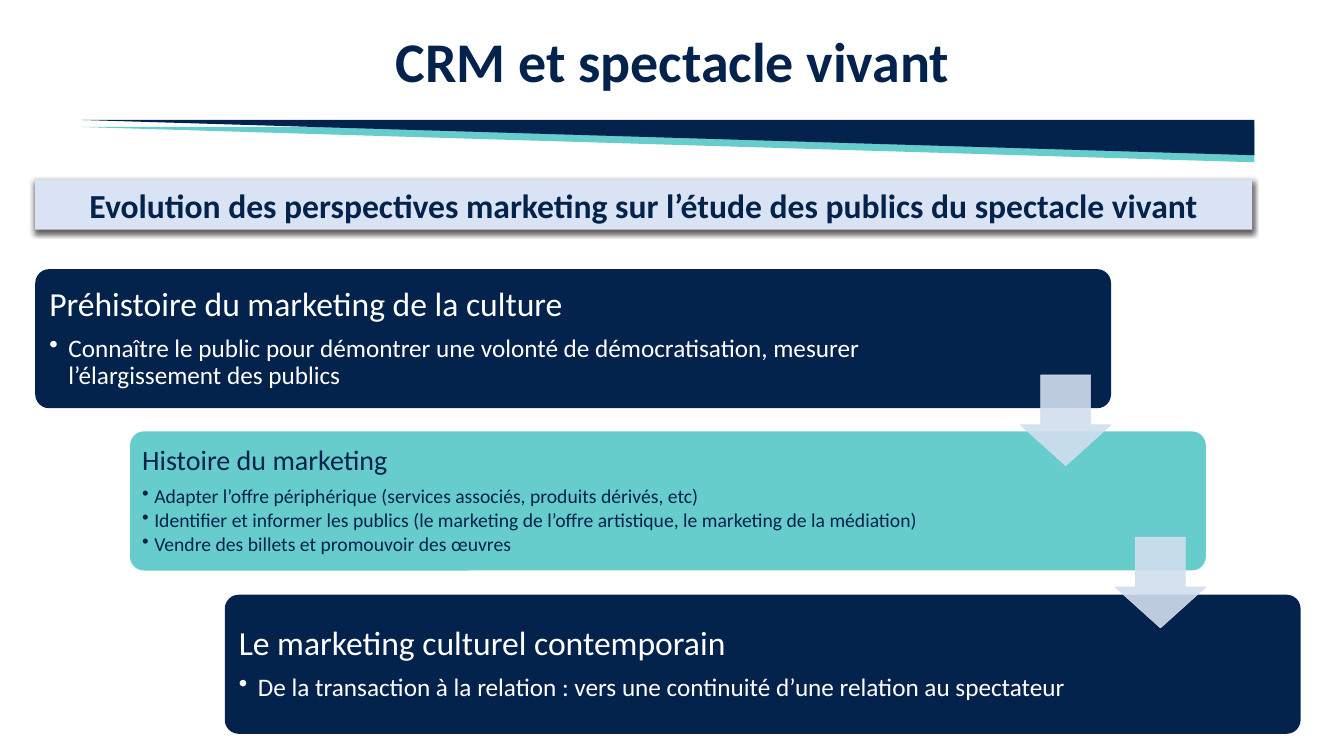
"""Builds the slide on CRM and the performing arts."""
from lxml.etree import SubElement as Sub
from pptx import Presentation
from pptx.dml.color import RGBColor
from pptx.enum.shapes import MSO_SHAPE as Kind
from pptx.enum.text import MSO_ANCHOR as Anchor, PP_ALIGN as Align
from pptx.oxml.ns import qn
from pptx.util import Pt

PX = 9144
FONT = "Calibri"
NAVY = RGBColor(0x03, 0x22, 0x4C)
TEAL = RGBColor(0x66, 0xCC, 0xCC)
PALE = RGBColor(0xDA, 0xE3, 0xF3)
ICE = RGBColor(0xD2, 0xDE, 0xEF)
WHITE = RGBColor(0xFF, 0xFF, 0xFF)

STAGES = [
    (NAVY, WHITE, 24, 18, 918, 10, 19, "Préhistoire du marketing de la culture", [
        "Connaître le public pour démontrer une volonté de démocratisation, "
        "mesurer l’élargissement des publics"]),
    (TEAL, NAVY, 20, 14, 875, 8, 12, "Histoire du marketing", [
        "Adapter l’offre périphérique (services associés, produits dérivés, etc)",
        "Identifier et informer les publics (le marketing de l’offre artistique, "
        "le marketing de la médiation)",
        "Vendre des billets et promouvoir des œuvres"]),
    (NAVY, WHITE, 24, 18, 875, 10, 19, "Le marketing culturel contemporain", [
        "De la transaction à la relation : vers une continuité d’une relation au spectateur"]),
]


def scale(*box):
    """Turn px lengths into EMU."""
    return [n * PX for n in box]


def add_form(slide, kind, box, fill):
    """Add a flat preset shape without outline."""
    form = slide.shapes.add_shape(kind, *scale(*box))
    form.shadow.inherit = False
    form.fill.solid()
    form.fill.fore_color.rgb = fill
    form.line.fill.background()
    return form


def style(para, size, color, bold=False):
    """Set the font of every run in a paragraph."""
    for run in para.runs:
        font = run.font
        font.name, font.size, font.bold = FONT, Pt(size), bold
        font.color.rgb = color


def add_title(slide, box, text):
    """Place and format the title."""
    title = slide.shapes.title
    title.left, title.top, title.width, title.height = scale(*box)
    frame = title.text_frame
    frame.text = text
    frame.vertical_anchor = Anchor.MIDDLE
    para = frame.paragraphs[0]
    para.alignment, para.line_spacing = Align.CENTER, 0.9
    style(para, 40, NAVY, True)


def add_wedge(slide, box):
    """Draw the two-tone wedge under the title."""
    x, y, w, h = box
    for drop, fill in ((7, TEAL), (0, NAVY)):
        add_form(slide, Kind.RIGHT_TRIANGLE, (x, y + drop, w, h), fill).rotation = 180


def add_banner(slide, box, text):
    """Draw the shadowed subtitle banner."""
    form = add_form(slide, Kind.RECTANGLE, box, PALE)
    effects = form._element.spPr.find(qn("a:effectLst"))
    shade = Sub(effects, qn("a:outerShdw"), blurRad=str(Pt(4.5)),
                dist=str(Pt(1.5)), dir="5400000", rotWithShape="0")
    black = Sub(shade, qn("a:srgbClr"), val="000000")
    Sub(black, qn("a:alpha"), val="63000")
    frame = form.text_frame
    frame.text = text
    para = frame.paragraphs[0]
    para.alignment = Align.CENTER
    style(para, 24, NAVY, True)


def add_bullet(para, indent):
    """Give a paragraph a hanging bullet."""
    para.level = 1
    props = para._p.get_or_add_pPr()
    props.set("marL", str(indent * PX))
    props.set("indent", str(-indent * PX))
    Sub(props, qn("a:buChar"), char="•")


def add_stage(slide, box, stage):
    """Draw one rounded stage with its heading and bullets."""
    fill, color, big, small, width, inset, indent, head, points = stage
    x, y, w, h = box
    add_form(slide, Kind.ROUNDED_RECTANGLE, box, fill).adjustments[0] = 0.1
    frame = slide.shapes.add_textbox(*scale(x + 4, y + 4, width, h - 8)).text_frame
    frame.word_wrap = True
    frame.vertical_anchor = Anchor.MIDDLE
    frame.margin_left = frame.margin_right = inset * PX
    frame.margin_top = frame.margin_bottom = inset * PX
    frame.text = "\n".join([head, *points])
    for i, para in enumerate(frame.paragraphs):
        size, gap = (small, 0.15) if i else (big, 0.35)
        para.alignment, para.line_spacing = Align.LEFT, 0.9
        para.space_after = Pt(round(size * gap, 1))
        style(para, size, color)
        if i:
            add_bullet(para, indent)


def add_arrow(slide, box):
    """Draw a translucent arrow between two stages."""
    form = add_form(slide, Kind.DOWN_ARROW, box, ICE)
    form.adjustments[0], form.adjustments[1] = 0.55, 0.45
    form.line.color.rgb = ICE
    form.line.width = Pt(0.5)
    for tint in form._element.spPr.iter(qn("a:srgbClr")):
        Sub(tint, qn("a:alpha"), val="90000")


def add_steps(slide, box):
    """Lay the stages out as a staircase joined by arrows."""
    x, y, w, h = box
    wide, high = 1067, 138
    last = len(STAGES) - 1
    spots = [(x + i * (w - wide) // last, y + i * (h - high) // last)
             for i in range(len(STAGES))]
    for (left, top), stage in zip(spots, STAGES):
        add_stage(slide, (left, top, wide, high), stage)
    for left, top in spots[:-1]:
        add_arrow(slide, (left + wide - 90, top + 105, 90, 90))


def main():
    """Build and save the slide."""
    deck = Presentation()
    deck.slide_width, deck.slide_height = scale(1333, 750)
    slide = deck.slides.add_slide(deck.slide_layouts[5])
    add_wedge(slide, (81, 119, 1163, 35))
    add_title(slide, (92, -9, 1150, 145), "CRM et spectacle vivant")
    add_banner(slide, (35, 178, 1207, 50),
               "Evolution des perspectives marketing sur l’étude des publics du spectacle vivant")
    add_steps(slide, (35, 267, 1255, 461))
    deck.save("out.pptx")


if __name__ == "__main__":
    main()
